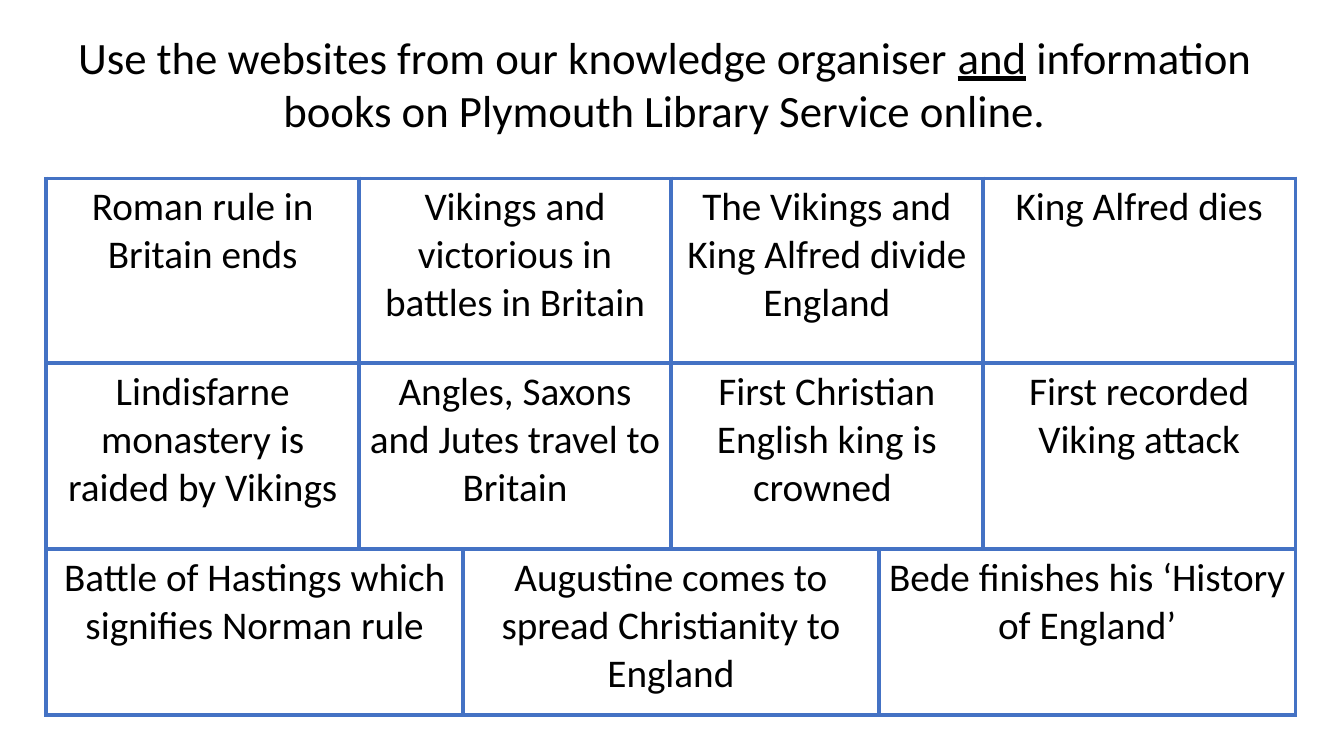
"""Build a slide with a table of events from Roman Britain to the Norman conquest."""
from lxml import etree
from pptx import Presentation
from pptx import util as u
from pptx.dml import color
from pptx.enum import text
from pptx.oxml import ns

PX = 9525
BLACK, WHITE, BLUE = "000000", "FFFFFF", "4472C4"
BORDER_POINTS = 3


def rgb(value):
    return color.RGBColor.from_string(value)


def add_run(paragraph, words, size, underline=None):
    run = paragraph.add_run()
    run.text = words
    run.font.name = "Calibri"
    run.font.size = u.Pt(size)
    run.font.color.rgb = rgb(BLACK)
    run.font.underline = underline


presentation = Presentation()
presentation.slide_width = 1280 * PX
presentation.slide_height = 720 * PX
slide = presentation.slides.add_slide(presentation.slide_layouts[5])

title = slide.shapes.title
title.left, title.top, title.width, title.height = (n * PX for n in (44, 23, 1178, 113))
frame = title.text_frame
frame.word_wrap = True
frame.auto_size = text.MSO_AUTO_SIZE.NONE
frame.vertical_anchor = text.MSO_ANCHOR.TOP
paragraph = frame.paragraphs[0]
paragraph.alignment = text.PP_ALIGN.CENTER
add_run(paragraph, "Use the websites from our knowledge organiser ", 32)
add_run(paragraph, "and", 32, True)
add_run(paragraph, " information books on Plymouth Library Service online.", 32)

column_widths = [298, 99, 198, 198, 99, 298]
row_heights = [176, 177, 158]
four_spans = [(0, 0), (1, 2), (3, 4), (5, 5)]
three_spans = [(0, 1), (2, 3), (4, 5)]
rows = [
    (four_spans, ["Roman rule in Britain ends",
                  "Vikings and victorious in battles in Britain",
                  "The Vikings and King Alfred divide England",
                  "King Alfred dies"]),
    (four_spans, ["Lindisfarne monastery is raided by Vikings",
                  "Angles, Saxons and Jutes travel to Britain",
                  "First Christian English king is crowned ",
                  "First recorded Viking attack"]),
    (three_spans, ["Battle of Hastings which signifies Norman rule",
                   "Augustine comes to spread Christianity to England",
                   "Bede finishes his ‘History of England’"]),
]

table = slide.shapes.add_table(
    len(row_heights), len(column_widths), 44 * PX, 170 * PX,
    sum(column_widths) * PX, sum(row_heights) * PX).table
table.first_row = False
table.horz_banding = False
for column, width in zip(table.columns, column_widths):
    column.width = width * PX
for row, height in zip(table.rows, row_heights):
    row.height = height * PX

for row_index, (spans, events) in enumerate(rows):
    for (first, last), event in zip(spans, events):
        cell = table.cell(row_index, first)
        if last > first:
            cell.merge(table.cell(row_index, last))
        paragraph = cell.text_frame.paragraphs[0]
        paragraph.alignment = text.PP_ALIGN.CENTER
        add_run(paragraph, event, 28)

for cell in table.iter_cells():
    properties = cell._tc.get_or_add_tcPr()
    for side in "RTB" if cell.is_spanned else "LRTB":
        line = etree.SubElement(properties, ns.qn(f"a:ln{side}"), w=str(u.Pt(BORDER_POINTS)))
        fill = etree.SubElement(line, ns.qn("a:solidFill"))
        etree.SubElement(fill, ns.qn("a:srgbClr"), val=BLUE)
    cell.fill.solid()
    cell.fill.fore_color.rgb = rgb(WHITE)

presentation.save("out.pptx")
